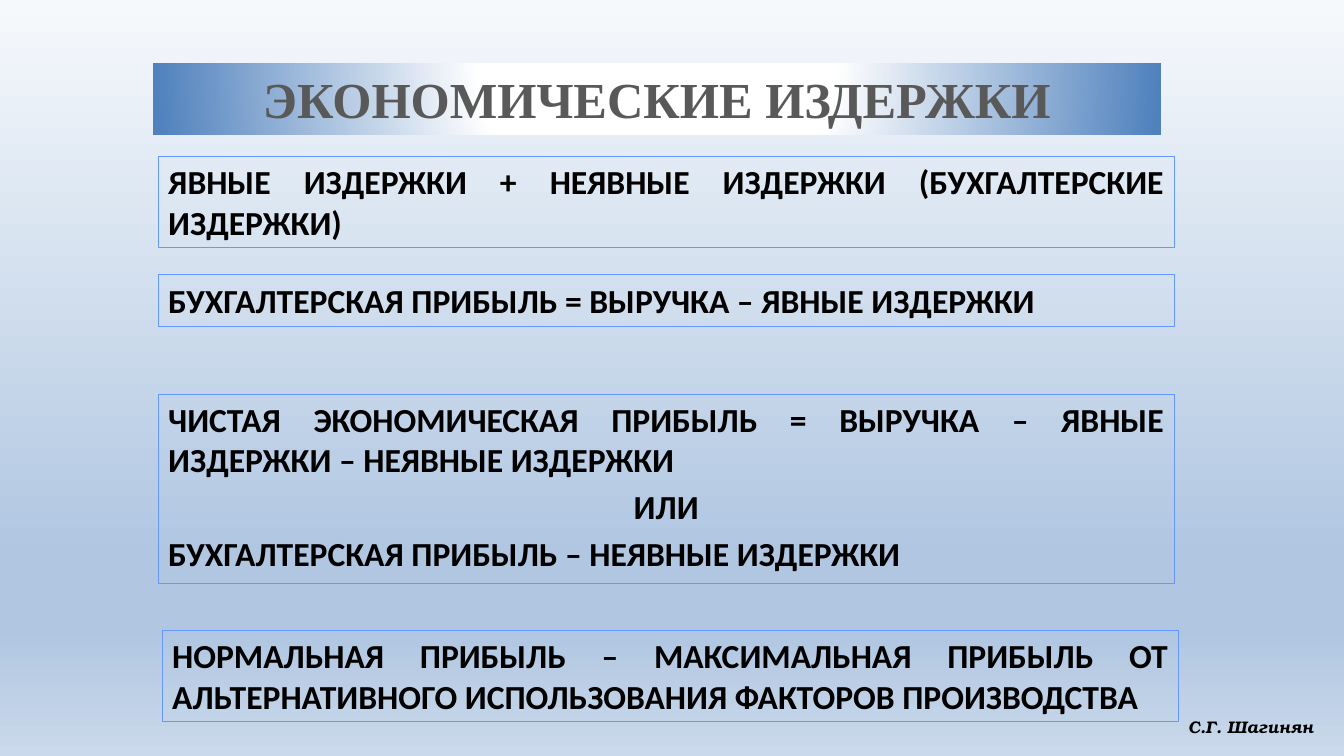
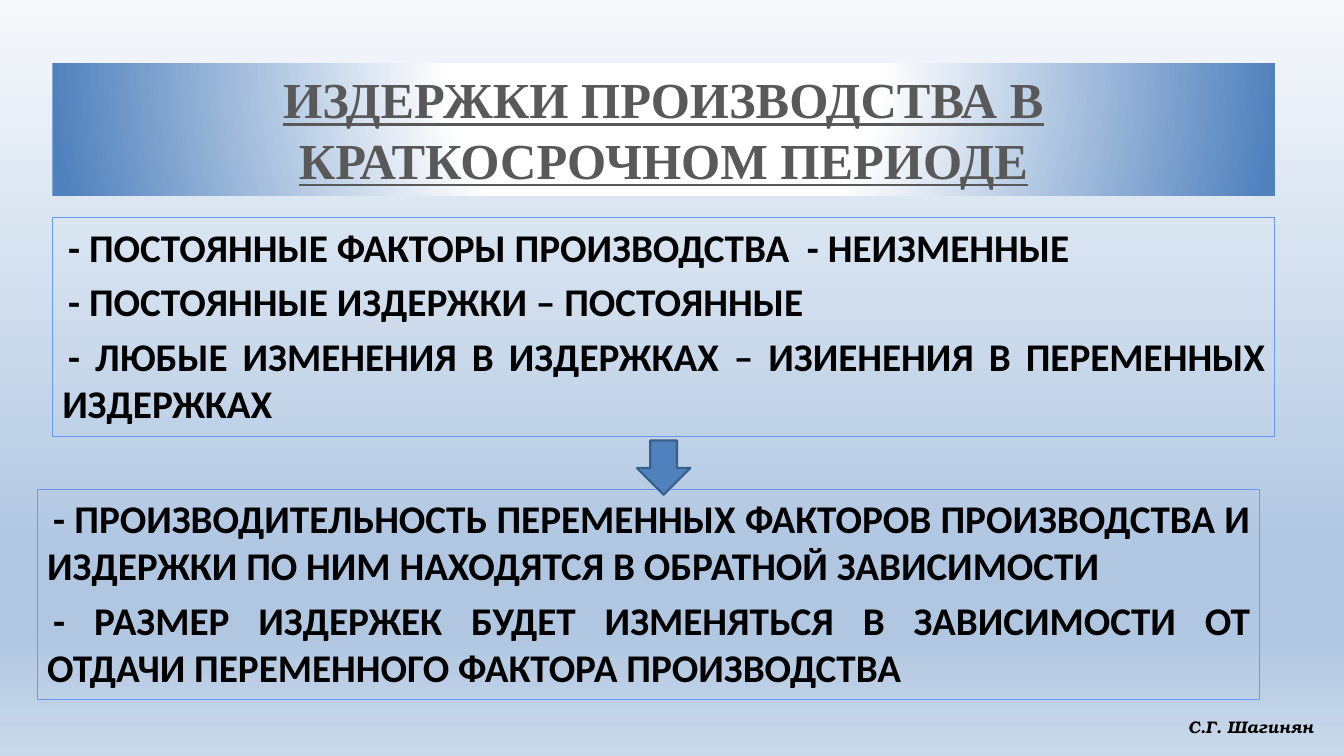
from lxml.etree import SubElement
from pptx import Presentation
from pptx.dml.color import RGBColor
from pptx.enum.shapes import MSO_SHAPE
from pptx.enum.text import MSO_ANCHOR, MSO_AUTO_SIZE, PP_ALIGN
from pptx.oxml.ns import qn
from pptx.util import Cm, Pt

COLORS = {
    "sky_top": "F6F9FC",
    "sky": "B0C6E1",
    "sky_bottom": "CAD9EB",
    "white": "FFFFFF",
    "blue": "4F81BD",
    "arrow_edge": "3A5F8C",
    "frame": "6699FF",
    "title": "595959",
    "text": "000000",
}
BACKGROUND_STOPS = [(0, "sky_top"), (74, "sky"), (83, "sky"), (100, "sky_bottom")]
BAND_STOPS = [(0, "white"), (35, "white"), (100, "blue")]
BAND_FOCUS = {"l": 50, "t": -80, "r": 50, "b": 180}
BAND_TOP = 1.6
AUTHOR = "С.Г. Шагинян"
DASH_INDENT = 0.15


def rgb(name):
    return RGBColor.from_string(COLORS[name])


def box(left, top, width, height):
    return Cm(left), Cm(top), Cm(width), Cm(height)


def style_font(paragraph, name, size, color):
    font = paragraph.font
    font.name, font.size, font.bold = name, Pt(size), True
    font.color.rgb = rgb(color)
    return font


def paint_gradient(fill, owner, stops):
    """Give the fill its own stops and return its gradient element."""
    fill.gradient()
    gradient = owner.find(".//" + qn("a:gradFill"))
    for child in list(gradient):
        gradient.remove(child)
    stop_list = SubElement(gradient, qn("a:gsLst"))
    for position, color in stops:
        stop = SubElement(stop_list, qn("a:gs"), pos=str(position * 1000))
        SubElement(stop, qn("a:srgbClr"), val=COLORS[color])
    return gradient


def paint_background(master):
    gradient = paint_gradient(master.background.fill, master.element, BACKGROUND_STOPS)
    SubElement(gradient, qn("a:lin"), ang="5400000", scaled="0")


def add_title_band(slide, text, left, width, height, underline=False):
    title = slide.shapes.title
    title.left, title.top, title.width, title.height = box(left, BAND_TOP, width, height)
    gradient = paint_gradient(title.fill, title.element, BAND_STOPS)
    shade = SubElement(gradient, qn("a:path"), {"path": "circle"})
    SubElement(shade, qn("a:fillToRect"),
               {side: str(share * 1000) for side, share in BAND_FOCUS.items()})
    frame = title.text_frame
    frame.text = text
    frame.auto_size = MSO_AUTO_SIZE.NONE
    frame.vertical_anchor = MSO_ANCHOR.TOP
    paragraph = frame.paragraphs[0]
    paragraph.alignment = PP_ALIGN.CENTER
    style_font(paragraph, "Times New Roman", 36, "title").underline = underline


def add_author(slide):
    frame = slide.shapes.add_textbox(*box(29.69, 17.93, 4, 0.76)).text_frame
    frame.word_wrap = False
    frame.text = AUTHOR
    style_font(frame.paragraphs[0], "TeX Gyre Bonum", 12, "text").italic = True


def add_framed_text(slide, place, lines, size, centered=(), indent=0):
    panel = slide.shapes.add_shape(MSO_SHAPE.RECTANGLE, *box(*place))
    panel.shadow.inherit = False
    panel.fill.background()
    panel.line.color.rgb = rgb("frame")
    panel.line.width = Pt(0.75)
    frame = panel.text_frame
    frame.word_wrap = True
    frame.vertical_anchor = MSO_ANCHOR.TOP
    frame.text = "\n".join(lines)
    for number, paragraph in enumerate(frame.paragraphs):
        paragraph.alignment = PP_ALIGN.CENTER if number in centered else PP_ALIGN.JUSTIFY
        style_font(paragraph, "Calibri", size, "text")
        if number:
            paragraph.space_before = Pt(size * 0.2)
        if indent:
            paragraph._p.get_or_add_pPr().set("indent", str(Cm(indent)))


def add_down_arrow(slide, place):
    arrow = slide.shapes.add_shape(MSO_SHAPE.DOWN_ARROW, *box(*place))
    arrow.shadow.inherit = False
    arrow.fill.solid()
    arrow.fill.fore_color.rgb = rgb("blue")
    arrow.line.color.rgb = rgb("arrow_edge")
    arrow.line.width = Pt(1.5)


def build_economic_costs(slide):
    add_title_band(slide, "ЭКОНОМИЧЕСКИЕ ИЗДЕРЖКИ", 3.86, 25.4, 1.8)
    left, width = 3.99, 25.6
    definitions = [
        (left, 3.94, 2.31, ["ЯВНЫЕ ИЗДЕРЖКИ + НЕЯВНЫЕ ИЗДЕРЖКИ (БУХГАЛТЕРСКИЕ ИЗДЕРЖКИ)"]),
        (left, 6.93, 1.3, ["БУХГАЛТЕРСКАЯ ПРИБЫЛЬ = ВЫРУЧКА – ЯВНЫЕ ИЗДЕРЖКИ"]),
        (left, 9.93, 4.78, [
            "ЧИСТАЯ ЭКОНОМИЧЕСКАЯ ПРИБЫЛЬ = ВЫРУЧКА – ЯВНЫЕ ИЗДЕРЖКИ – НЕЯВНЫЕ ИЗДЕРЖКИ",
            "ИЛИ",
            "БУХГАЛТЕРСКАЯ ПРИБЫЛЬ – НЕЯВНЫЕ ИЗДЕРЖКИ"]),
        (left + 0.1, 15.88, 2.31, [
            "НОРМАЛЬНАЯ ПРИБЫЛЬ – МАКСИМАЛЬНАЯ ПРИБЫЛЬ ОТ АЛЬТЕРНАТИВНОГО "
            "ИСПОЛЬЗОВАНИЯ ФАКТОРОВ ПРОИЗВОДСТВА"]),
    ]
    for x, top, height, lines in definitions:
        add_framed_text(slide, (x, top, width, height), lines, 24, centered=(1,))


def build_short_run_costs(slide):
    left, width = 1.32, 30.81
    add_title_band(slide, "ИЗДЕРЖКИ ПРОИЗВОДСТВА В КРАТКОСРОЧНОМ ПЕРИОДЕ",
                   left, width, 3.33, underline=True)
    # Premises, then what follows from them
    add_framed_text(slide, (left, 5.49, width, 5.51), [
        "- ПОСТОЯННЫЕ ФАКТОРЫ ПРОИЗВОДСТВА  - НЕИЗМЕННЫЕ",
        "- ПОСТОЯННЫЕ ИЗДЕРЖКИ – ПОСТОЯННЫЕ",
        "- ЛЮБЫЕ ИЗМЕНЕНИЯ В ИЗДЕРЖКАХ – ИЗИЕНЕНИЯ В ПЕРЕМЕННЫХ ИЗДЕРЖКАХ",
    ], 28, indent=DASH_INDENT)
    add_framed_text(slide, (0.94, 12.34, width, 5.28), [
        "- ПРОИЗВОДИТЕЛЬНОСТЬ ПЕРЕМЕННЫХ ФАКТОРОВ ПРОИЗВОДСТВА И ИЗДЕРЖКИ "
        "ПО НИМ НАХОДЯТСЯ В ОБРАТНОЙ ЗАВИСИМОСТИ",
        "- РАЗМЕР ИЗДЕРЖЕК БУДЕТ ИЗМЕНЯТЬСЯ В ЗАВИСИМОСТИ ОТ ОТДАЧИ "
        "ПЕРЕМЕННОГО ФАКТОРА ПРОИЗВОДСТВА",
    ], 28, indent=DASH_INDENT)
    add_down_arrow(slide, (16.05, 11.1, 1.35, 1.37))


def main():
    deck = Presentation()
    deck.slide_width, deck.slide_height = Cm(33.87), Cm(19.05)
    paint_background(deck.slide_master)
    title_only = deck.slide_layouts[5]
    for build in (build_economic_costs, build_short_run_costs):
        slide = deck.slides.add_slide(title_only)
        build(slide)
        add_author(slide)
    deck.save("out.pptx")


if __name__ == "__main__":
    main()
